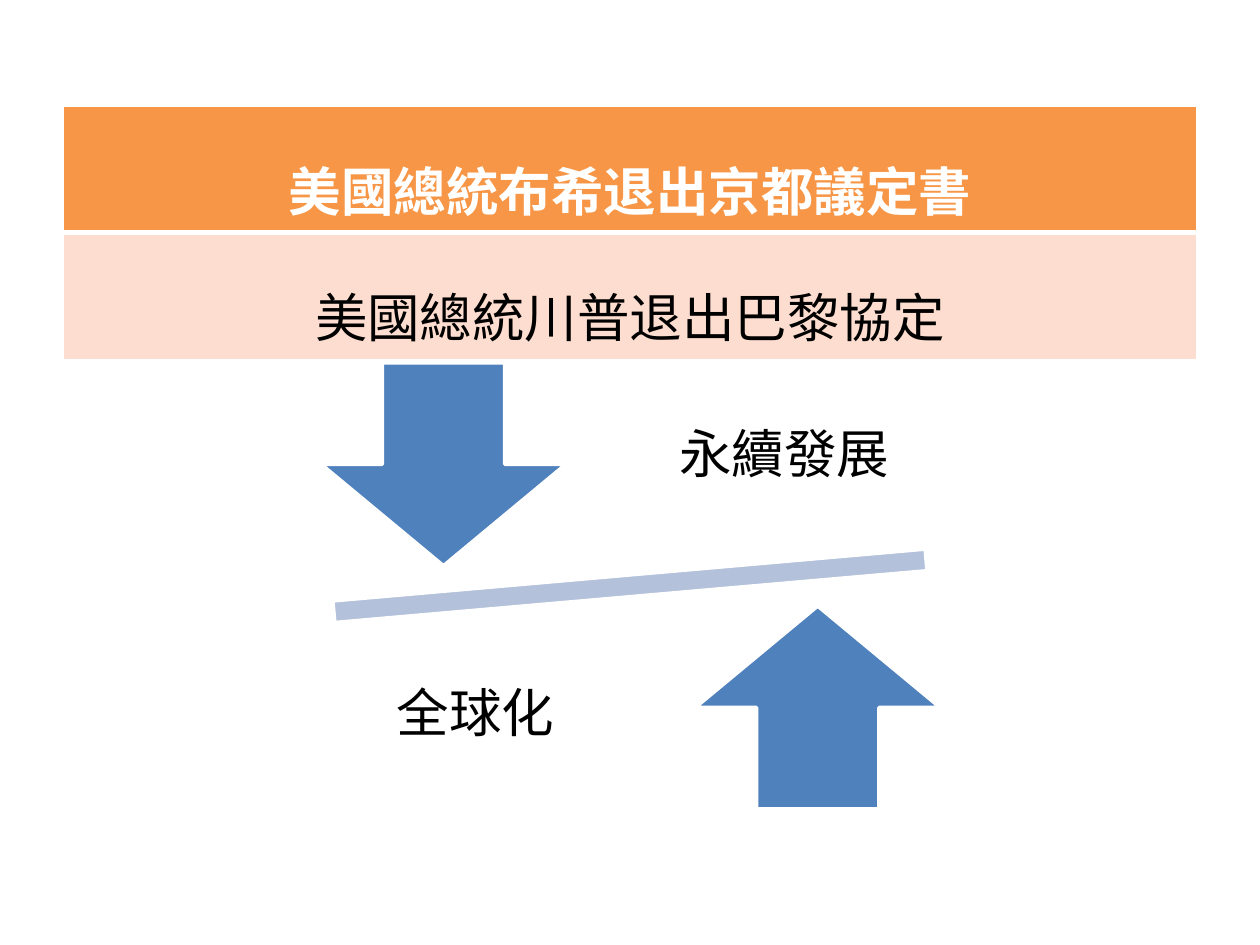
from lxml import etree
from pptx import Presentation
from pptx.dml.color import RGBColor
from pptx.enum.shapes import MSO_SHAPE
from pptx.enum.text import MSO_ANCHOR, PP_ALIGN
from pptx.oxml.ns import qn
from pptx.util import Inches, Pt

DOWN, UP, MINUS = MSO_SHAPE.DOWN_ARROW, MSO_SHAPE.UP_ARROW, MSO_SHAPE.MATH_MINUS
CENTER, MIDDLE = PP_ALIGN.CENTER, MSO_ANCHOR.MIDDLE
FONT = "Noto Sans CJK SC"
COLORS = {"white": "FFFFFF", "black": "000000", "head": "F79646",
          "body": "FCDDCF", "arrow": "4F81BD", "beam": "B3C1DB"}


def shade(key):
    """Return the named colour."""
    return RGBColor.from_string(COLORS[key])


def write(frame, text, color, spacing, bold=False):
    """Write one centred line in a text frame."""
    para = frame.paragraphs[0]
    para.alignment, para.line_spacing = CENTER, spacing
    run = para.add_run()
    run.text = text
    style = {"name": FONT, "size": Pt(30), "bold": bold}
    for name, value in style.items():
        setattr(run.font, name, value)
    run.font.color.rgb = shade(color)
    etree.SubElement(run.font._element, qn("a:ea"), typeface=FONT)


def edge(cell, sides):
    """Draw white borders of the given widths on a cell."""
    props = cell._tc.get_or_add_tcPr()
    for spot, (side, width) in enumerate(sides.items()):
        line = etree.Element(qn(f"a:ln{side}"), w=str(Pt(width)))
        fill = etree.SubElement(line, qn("a:solidFill"))
        etree.SubElement(fill, qn("a:srgbClr"), val=COLORS["white"])
        props.insert(spot, line)


def add_table(slide, box, rows):
    """Place the one-column table of events in the box."""
    table = slide.shapes.add_table(len(rows), 1, *map(Inches, box)).table
    pads = {"margin_left": 0.13, "margin_right": 0.13,
            "margin_top": 0.05, "margin_bottom": 0.05}
    for spot, (text, fill, color, bold) in enumerate(rows):
        cell = table.cell(spot, 0)
        for name, value in pads.items():
            setattr(cell, name, Inches(value))
        cell.fill.solid()
        cell.fill.fore_color.rgb = shade(fill)
        write(cell.text_frame, text, color, 1.5, bold)
        top, base = (1, 3) if spot == 0 else (3, 1)
        edge(cell, {"L": 1, "R": 1, "T": top, "B": base})


def add_form(shapes, kind, box, fill):
    """Place a filled shape with a white outline."""
    form = shapes.add_shape(kind, *map(Inches, box))
    form.shadow.inherit = False
    form.fill.solid()
    form.fill.fore_color.rgb = shade(fill)
    form.line.color.rgb = shade("white")
    form.line.width = Pt(2)
    return form


def add_side(slide, kind, box, text, area):
    """Group an arrow with its label."""
    shapes = slide.shapes.add_group_shape().shapes
    add_form(shapes, kind, box, "arrow")
    frame = shapes.add_textbox(*map(Inches, area)).text_frame
    frame.word_wrap, frame.vertical_anchor = True, MIDDLE
    for side in ("left", "top", "right", "bottom"):
        setattr(frame, f"margin_{side}", Inches(0.23))
    write(frame, text, "black", 0.9)


def add_scale(slide, box):
    """Place the tilted beam and its two opposed arrows in the box."""
    left, top, width, height = box
    wide, tall, deep = 1.94, 1.61, 1.49
    beam = add_form(slide.shapes, MINUS,
                    (left, top + (height - 0.73) / 2, width, 0.73), "beam")
    beam.rotation = 355
    add_side(slide, DOWN, (left + 0.76, top, wide, tall),
             "永續發展", (left + 3.22, top, 2.43, deep))
    add_side(slide, UP, (left + 3.73, top + height - tall, wide, tall),
             "全球化", (left + 0.95, top + height - deep, 2.07, deep))


def main():
    """Build the slide and save it."""
    deck = Presentation()
    deck.slide_width, deck.slide_height = Inches(10), Inches(7.5)
    slide = deck.slides.add_slide(deck.slide_layouts[6])
    add_table(slide, (0.5, 0.84, 9, 1.7), [
        ("美國總統布希退出京都議定書", "head", "white", True),
        ("美國總統川普退出巴黎協定", "body", "black", False)])
    add_scale(slide, (1.79, 2.88, 6.42, 3.54))
    deck.save("out.pptx")


if __name__ == "__main__":
    main()
